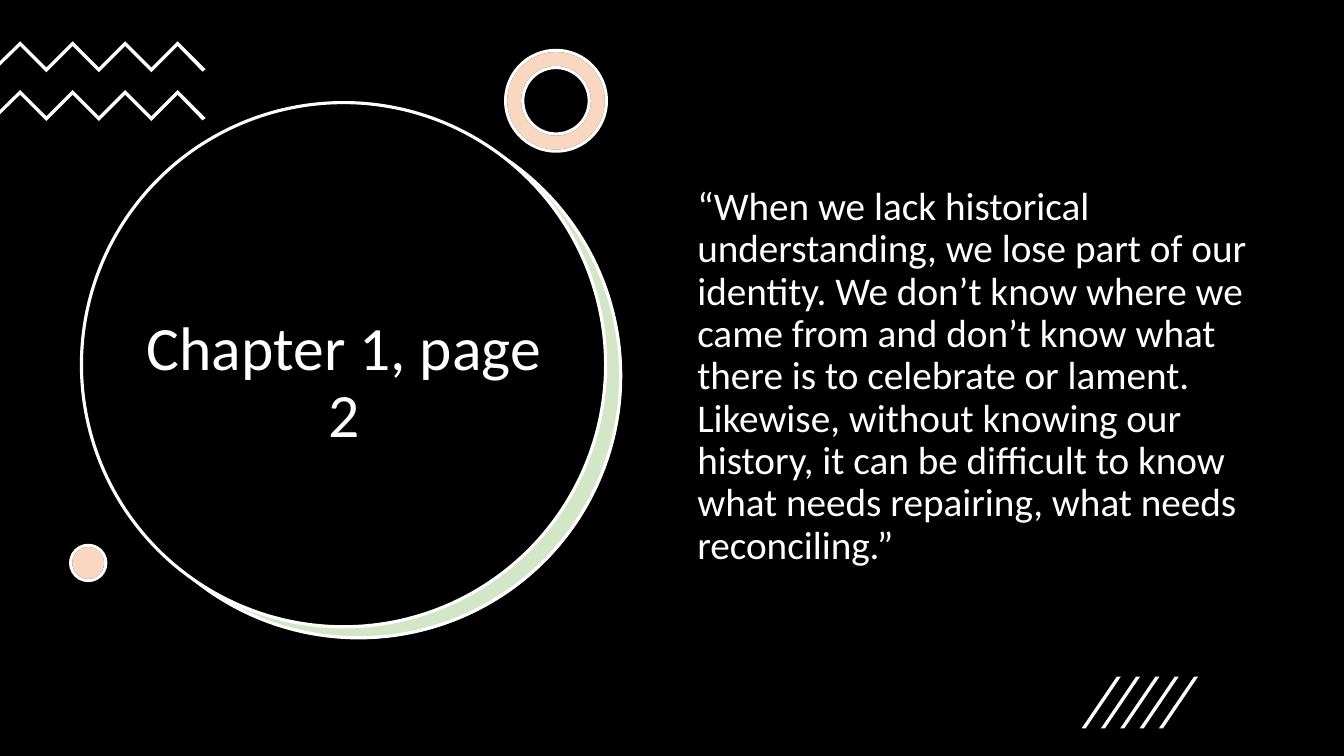
from lxml.etree import SubElement
from pptx import Presentation
from pptx.dml.color import RGBColor
from pptx.enum.shapes import MSO_SHAPE
from pptx.enum.text import MSO_ANCHOR, PP_ALIGN
from pptx.oxml.ns import qn
from pptx.util import Pt

BLACK, WHITE, GREEN, ORANGE = "000000", "FFFFFF", "70AD47", "ED7D31"
QUOTE = (
    "“When we lack historical understanding, we lose part of our identity. "
    "We don’t know where we came from and don’t know what there is to celebrate or lament. "
    "Likewise, without knowing our history, it can be difficult to know "
    "what needs repairing, what needs reconciling.”"
)


def rgb(value):
    """Turn a hex string into a colour."""
    return RGBColor.from_string(value)


def paint(sp, fill, line=None, alpha=None):
    """Set fill, opacity in percent and outline, without a shadow."""
    sp.shadow.inherit = False
    sp.fill.solid()
    sp.fill.fore_color.rgb = rgb(fill)
    if alpha:
        color = sp.fill._xPr.find(qn("a:solidFill"))[0]
        SubElement(color, qn("a:alpha")).set("val", str(alpha * 1000))
    if line:
        sp.line.color.rgb = rgb(line)
        sp.line.width = Pt(2.25)
    else:
        sp.line.fill.background()


def add_preset(shapes, kind, x, y, w, h, fill, line=None, alpha=None):
    """Add a painted preset shape."""
    sp = shapes.add_shape(kind, Pt(x), Pt(y), Pt(w), Pt(h))
    paint(sp, fill, line, alpha)
    return sp


def add_polygon(shapes, points):
    """Add a closed white outline through the points."""
    points = [(Pt(x), Pt(y)) for x, y in points]
    builder = shapes.build_freeform(*points[0])
    builder.add_line_segments(points[1:], close=True)
    paint(builder.convert_to_shape(), WHITE)


def add_text(shapes, x, y, w, h, text, size, align, anchor, top=3.6):
    """Add a wrapped text box with one paragraph."""
    tf = shapes.add_textbox(Pt(x), Pt(y), Pt(w), Pt(h)).text_frame
    tf.word_wrap = True
    tf.vertical_anchor = anchor
    tf.margin_top = Pt(top)
    p = tf.paragraphs[0]
    p.alignment = align
    p.line_spacing = 0.9
    r = p.add_run()
    r.text = text
    r.font.name = "Calibri"
    r.font.size = Pt(size)
    r.font.color.rgb = rgb(WHITE)


def add_title_disc(shapes, x, y, size):
    """Draw the layered disc and the chapter title inside it."""
    oval = MSO_SHAPE.OVAL
    add_preset(shapes, oval, x + 11.5, y + 8.6, size, size, WHITE)
    add_preset(shapes, oval, x + 10.8, y + 7.9, size, size, GREEN, WHITE, 30)
    add_preset(shapes, oval, x, y, size, size, BLACK, WHITE)
    add_text(shapes, x + 28.8, y + 74.2, 317.5, 253.4, "Chapter 1, page 2", 44,
             PP_ALIGN.CENTER, MSO_ANCHOR.MIDDLE)


def add_zigzags(shapes, x, y, row_gap):
    """Draw two zigzag bands running in from the left edge."""
    group = shapes.add_group_shape().shapes
    step, thick = 18.75, 3.4
    for top in (y, y + row_gap):
        ridge = [(x + 14.4 + i * step, top + i % 2 * step) for i in range(7)]
        under = [(px, py + thick) for px, py in reversed(ridge)]
        tip = [(x + 146.9, top + 20), (x + 144.7, top + 21.7)]
        tail = [(x, top + 17.4), (x, top + 14.2)]
        add_polygon(group, ridge + tip + under + tail)


def add_accent(shapes, kind, x, y, size):
    """Draw a pale orange accent over a white base and return both layers."""
    return [add_preset(shapes, kind, x, y, size, size, WHITE, BLACK),
            add_preset(shapes, kind, x, y, size, size, ORANGE, WHITE, 30)]


def add_ring(shapes, x, y, size):
    """Draw the ring accent."""
    for sp in add_accent(shapes, MSO_SHAPE.DONUT, x, y, size):
        sp.adjustments[0] = 0.17


def add_slashes(shapes, x, y, h):
    """Draw five slanted strokes at equal gaps."""
    group = shapes.add_group_shape().shapes
    for i in range(5):
        left = x + i * 13.8
        add_polygon(group, [(left + 2.9, y + h), (left, y + h),
                            (left + 25.1, y), (left + 28, y)])


def add_quote_slide(prs):
    """Build the chapter quote slide."""
    shapes = prs.slides.add_slide(prs.slide_layouts[6]).shapes
    add_preset(shapes, MSO_SHAPE.RECTANGLE, 0, 0, 960, 540, BLACK)
    add_title_disc(shapes, 58.2, 73.3, 374.4)
    add_zigzags(shapes, 0, 29.5, 34.8)
    add_ring(shapes, 361.2, 36, 72)
    add_accent(shapes, MSO_SHAPE.OVAL, 50.4, 389.5, 25.2)
    add_text(shapes, 491, 89.3, 411, 342.7, QUOTE, 28,
             PP_ALIGN.LEFT, MSO_ANCHOR.TOP, 44)
    add_slashes(shapes, 772.6, 483.4, 36.9)


def main():
    """Create the deck and save it."""
    prs = Presentation()
    prs.slide_width, prs.slide_height = Pt(960), Pt(540)
    add_quote_slide(prs)
    prs.save("out.pptx")


if __name__ == "__main__":
    main()
